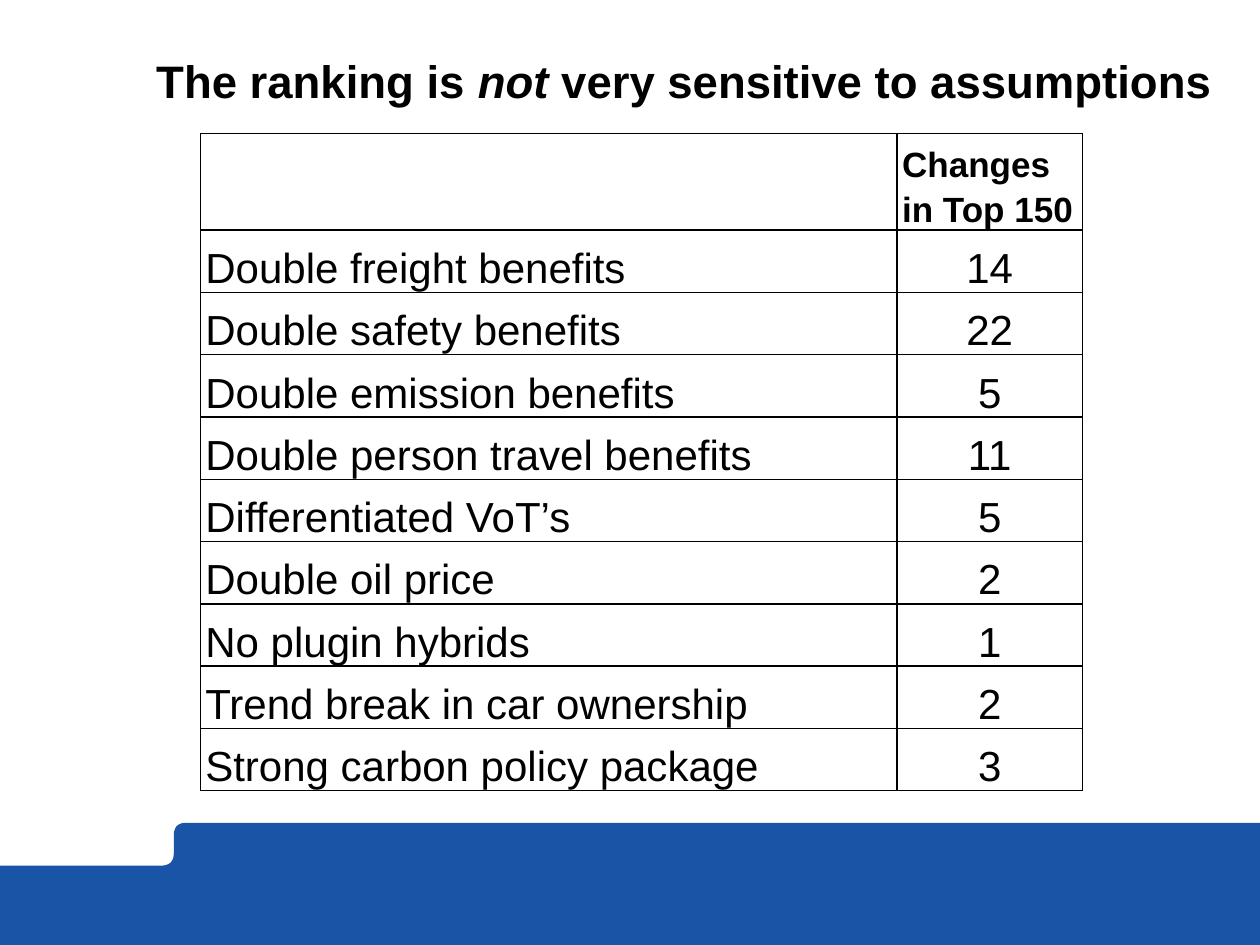
from dataclasses import dataclass

from lxml import etree
from pptx import Presentation
from pptx.dml.color import RGBColor
from pptx.enum.text import MSO_ANCHOR, PP_ALIGN
from pptx.oxml.ns import qn
from pptx.util import Inches, Pt

TOP, BOTTOM = MSO_ANCHOR.TOP, MSO_ANCHOR.BOTTOM
LEFT, CENTER = PP_ALIGN.LEFT, PP_ALIGN.CENTER


@dataclass(frozen=True)
class Theme:
    font: str = "Arial"
    ink: str = "000000"
    band: str = "1954A6"
    title: int = 26
    head: int = 20
    body: int = 24
    rule: int = 1


THEME = Theme()
ROWS = [
    ("Double freight benefits", 14),
    ("Double safety benefits", 22),
    ("Double emission benefits", 5),
    ("Double person travel benefits", 11),
    ("Differentiated VoT’s", 5),
    ("Double oil price", 2),
    ("No plugin hybrids", 1),
    ("Trend break in car ownership", 2),
    ("Strong carbon policy package", 3),
]


def add_run(para, text, size, **style):
    run = para.add_run()
    run.text = text
    look = {"name": THEME.font, "size": Pt(size), "bold": False, "italic": False}
    for key, value in (look | style).items():
        setattr(run.font, key, value)
    run.font.color.rgb = RGBColor.from_string(THEME.ink)


def curve(start, ctrl, end, steps=10):
    """Points of a quadratic curve that rounds one corner."""
    return [
        tuple((1 - t) ** 2 * a + 2 * t * (1 - t) * b + t * t * c
              for a, b, c in zip(start, ctrl, end))
        for t in (i / steps for i in range(steps + 1))
    ]


def add_band(slide, left, top, width, height):
    # Footer band with a rounded step up from its lower left part
    step, drop, bend = 1.38, 0.34, 0.1
    points = [(0, height), (0, drop)]
    points += curve((step - bend, drop), (step, drop), (step, drop - bend))
    points += curve((step, bend), (step, 0), (step + bend, 0))
    points += [(width, 0), (width, height)]
    places = [(Inches(left + x), Inches(top + y)) for x, y in points]
    form = slide.shapes.build_freeform(*places[0])
    form.add_line_segments(places[1:], close=True)
    band = form.convert_to_shape()
    band.shadow.inherit = False
    band.fill.solid()
    band.fill.fore_color.rgb = RGBColor.from_string(THEME.band)
    band.line.fill.background()


def add_title(slide, left, top, width, height):
    box = slide.shapes.add_textbox(*map(Inches, (left, top, width, height)))
    frame = box.text_frame
    form = {"word_wrap": True, "vertical_anchor": TOP, "margin_left": 0,
            "margin_top": 0, "margin_right": 0, "margin_bottom": 0}
    for key, value in form.items():
        setattr(frame, key, value)
    para = frame.paragraphs[0]
    para.line_spacing = Pt(30)
    parts = [("The ranking is ", False), ("not", True),
             (" very sensitive to assumptions", False)]
    for text, slant in parts:
        add_run(para, text, THEME.title, bold=True, italic=slant)


def add_rules(cell):
    props = cell._tc.get_or_add_tcPr()
    for i, side in enumerate(("lnL", "lnR", "lnT", "lnB")):
        line = etree.Element(qn(f"a:{side}"), w=str(Pt(THEME.rule)))
        fill = etree.SubElement(line, qn("a:solidFill"))
        etree.SubElement(fill, qn("a:srgbClr"), val=THEME.ink)
        props.insert(i, line)


def fill_cell(cell, text, size, align=LEFT, bold=False):
    form = {"vertical_anchor": BOTTOM, "margin_left": Inches(0.04),
            "margin_right": Inches(0.04), "margin_top": 0, "margin_bottom": 0}
    for key, value in form.items():
        setattr(cell, key, value)
    cell.fill.background()
    add_rules(cell)
    para = cell.text_frame.paragraphs[0]
    para.alignment = align
    para.line_spacing = 1.15
    if text:
        add_run(para, text, size, bold=bold)


def add_grid(slide, left, top, width, height):
    count, head, side = len(ROWS) + 1, 0.71, 1.47
    box = map(Inches, (left, top, width, height))
    table = slide.shapes.add_table(count, 2, *box).table
    table.first_row = table.horz_banding = False
    for col, span in zip(table.columns, (width - side, side)):
        col.width = Inches(span)
    for i, row in enumerate(table.rows):
        row.height = Inches((height - head) / len(ROWS) if i else head)

    # Header row, then one row for each test
    fill_cell(table.cell(0, 0), "", THEME.head)
    fill_cell(table.cell(0, 1), "Changes in Top 150", THEME.head, bold=True)
    for i, (name, value) in enumerate(ROWS, 1):
        fill_cell(table.cell(i, 0), name, THEME.body)
        fill_cell(table.cell(i, 1), str(value), THEME.body, CENTER)


def main():
    deck = Presentation()
    deck.slide_width, deck.slide_height = Inches(10), Inches(7.5)
    slide = deck.slides.add_slide(deck.slide_layouts[6])
    add_band(slide, 0, 6.53, 10, 0.99)
    add_title(slide, 1.24, 0.44, 8.8, 0.69)
    add_grid(slide, 1.59, 1.06, 7, 5.16)
    deck.save("out.pptx")


if __name__ == "__main__":
    main()
